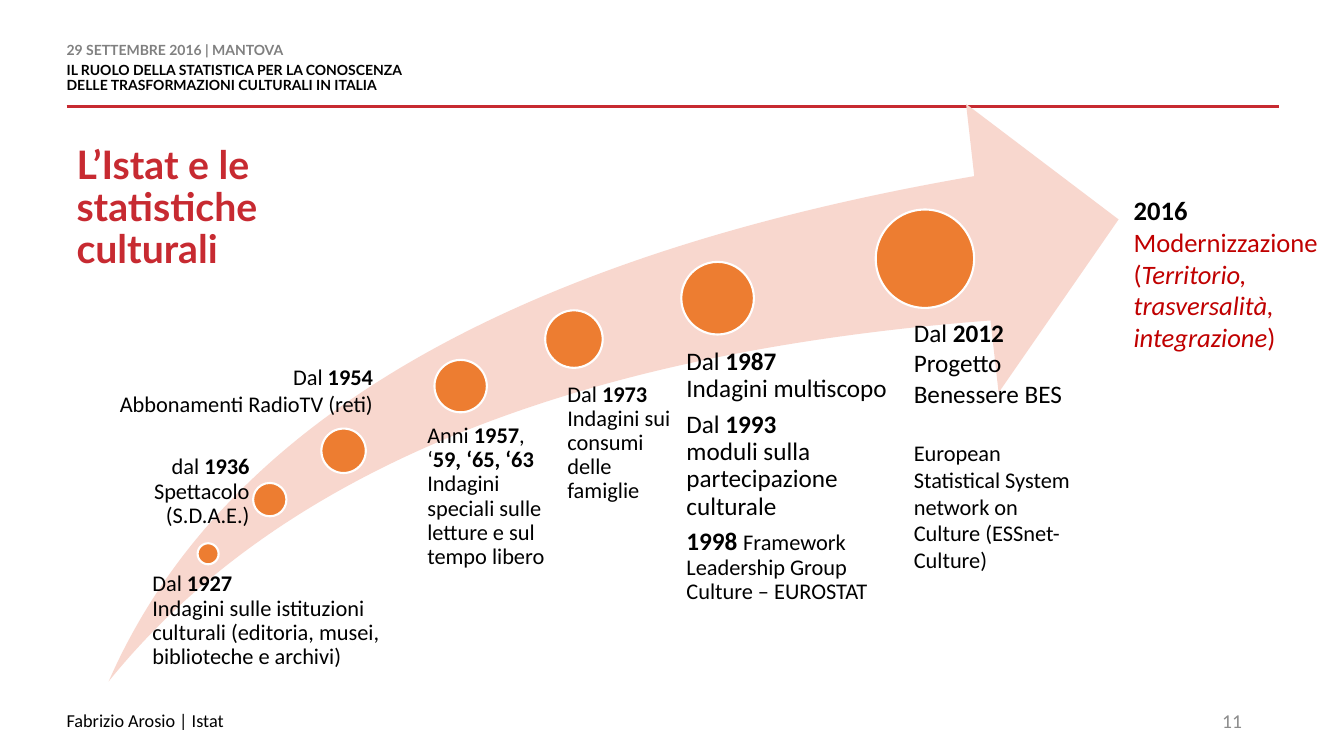
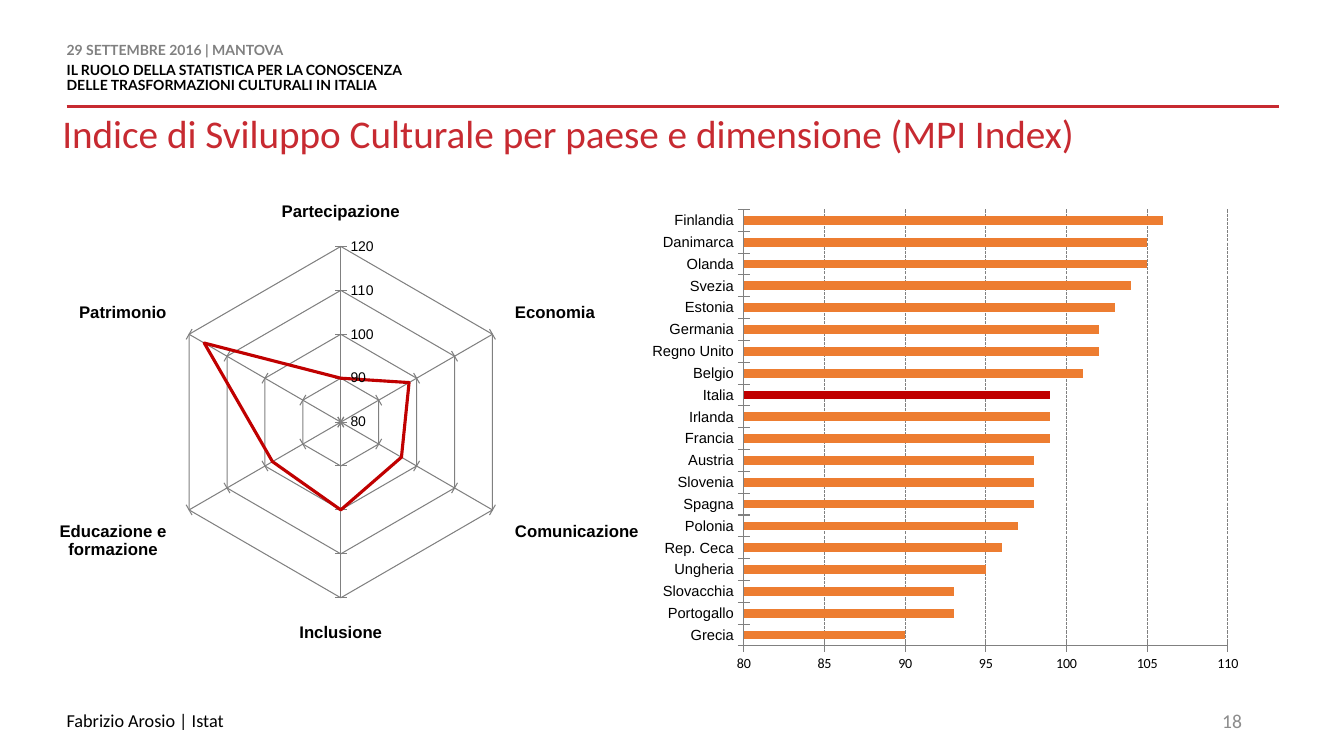
from dataclasses import dataclass

from lxml import etree
from pptx import Presentation
from pptx.chart.data import CategoryChartData
from pptx.dml.color import RGBColor
from pptx.enum.chart import XL_CHART_TYPE, XL_TICK_MARK
from pptx.enum.dml import MSO_LINE
from pptx.enum.shapes import MSO_CONNECTOR, MSO_SHAPE
from pptx.enum.text import MSO_ANCHOR, PP_ALIGN
from pptx.oxml.ns import qn
from pptx.util import Cm, Pt

BAR, RADAR = XL_CHART_TYPE.BAR_CLUSTERED, XL_CHART_TYPE.RADAR
CROSS = XL_TICK_MARK.CROSS
DASH = MSO_LINE.SQUARE_DOT
STRAIGHT = MSO_CONNECTOR.STRAIGHT
SWOOSH, OVAL = MSO_SHAPE.SWOOSH_ARROW, MSO_SHAPE.OVAL
TOP, MIDDLE = MSO_ANCHOR.TOP, MSO_ANCHOR.MIDDLE
LEFT, RIGHT = PP_ALIGN.LEFT, PP_ALIGN.RIGHT


@dataclass(frozen=True)
class Theme:
    red: str = "C72A31"
    deep: str = "C00000"
    orange: str = "ED7D31"
    blush: str = "F8D7CE"
    black: str = "000000"
    white: str = "FFFFFF"
    gray: str = "808080"
    pale: str = "8C8C8C"
    body: str = "Calibri"
    head: str = "Lato"
    plain: str = "Arial"
    title: float = 28
    lead: float = 19
    large: float = 18
    text: float = 16
    page: float = 14
    foot: float = 13
    label: float = 12
    item: float = 10.5
    small: float = 10


T = Theme()
NONE = (0, 0, 0, 0)
INSET = (0.25, 0.13, 0.25, 0.13)


def rgb(code):
    return RGBColor.from_string(code)


def bold(text, **look):
    return text, {"bold": True, **look}


def style(font, size=None, name=None, color=None, bold=None, italic=None):
    if size:
        font.size = Pt(size)
    if name:
        font.name = name
    if color:
        font.color.rgb = rgb(color)
    if bold is not None:
        font.bold = bold
    if italic is not None:
        font.italic = italic


class Deck:
    def __init__(self):
        self.prs = Presentation()
        self.prs.slide_width, self.prs.slide_height = Cm(33.87), Cm(19.05)
        self.slide = None

    def page(self, number):
        """Start a slide with its header, rule and footer."""
        self.slide = self.prs.slides.add_slide(self.prs.slide_layouts[6])
        self.rule(1.68, 32.23, 2.69)
        head = self.text(
            (1.68, 1.09, 17.65, 1.68),
            [["29 SETTEMBRE 2016 | MANTOVA"],
             ["IL RUOLO DELLA STATISTICA PER LA CONOSCENZA"],
             ["DELLE TRASFORMAZIONI CULTURALI IN ITALIA"]],
            T.small, name=T.head, weight=True, inset=NONE, pitch=Pt(11))
        date = head.paragraphs[0]
        date.space_after = Pt(3)
        style(date.font, color=T.gray)
        self.text((1.68, 17.65, 25.35, 1.02), [["Fabrizio Arosio | Istat"]],
                  T.foot, inset=NONE, anchor=MIDDLE)
        self.text((23.93, 17.65, 7.62, 1.02), [[str(number)]],
                  T.page, color=T.pale, align=RIGHT, anchor=MIDDLE)

    def rule(self, start, end, y):
        line = self.slide.shapes.add_connector(
            STRAIGHT, Cm(start), Cm(y), Cm(end), Cm(y))
        line.line.color.rgb = rgb(T.red)
        line.line.width = Pt(2)
        etree.SubElement(line.element.spPr, qn("a:effectLst"))

    def title(self, box, text, **look):
        self.text(box, [[text]], T.title, color=T.red, inset=NONE,
                  pitch=0.9, **look)

    def text(self, box, paras, size=T.text, name=T.body, color=T.black,
             weight=None, align=LEFT, anchor=TOP, inset=INSET, pitch=None,
             gap=0):
        """Each paragraph is a list of strings or (string, look) pairs."""
        frame = self.slide.shapes.add_textbox(*map(Cm, box)).text_frame
        frame.word_wrap = True
        frame.vertical_anchor = anchor
        (frame.margin_left, frame.margin_top,
         frame.margin_right, frame.margin_bottom) = map(Cm, inset)
        for i, parts in enumerate(paras):
            para = frame.add_paragraph() if i else frame.paragraphs[0]
            para.alignment = align
            if pitch:
                para.line_spacing = pitch
            if i and gap:
                para.space_before = Pt(gap)
            style(para.font, size, name, color, weight)
            for part in parts:
                words, look = (part, {}) if isinstance(part, str) else part
                for j, row in enumerate(words.split("\n")):
                    if j:
                        para.add_line_break()
                    if row:
                        run = para.add_run()
                        run.text = row
                        style(run.font, **look)
        return frame

    def shape(self, kind, box, fill, edge=None):
        shape = self.slide.shapes.add_shape(kind, *map(Cm, box))
        shape.shadow.inherit = False
        shape.fill.solid()
        shape.fill.fore_color.rgb = rgb(fill)
        if edge:
            shape.line.color.rgb = rgb(edge)
            shape.line.width = Pt(1.5)
        else:
            shape.line.fill.background()
        return shape

    def chart(self, kind, box, data, plot, scale):
        """Add a one-series chart; plot is the inner area in fractions."""
        source = CategoryChartData(number_format="0")
        source.categories = [name for name, _ in data]
        source.add_series("MPI", [value for _, value in data])
        chart = self.slide.shapes.add_chart(
            kind, *map(Cm, box), source).chart
        chart.has_legend = chart.has_title = False
        style(chart.font, T.small, T.body, T.black)
        chart.plots[0].vary_by_categories = False
        # Axes
        values = chart.value_axis
        (values.minimum_scale, values.maximum_scale,
         values.major_unit) = scale
        values.has_major_gridlines = True
        for axis in (chart.category_axis, values):
            axis.major_tick_mark = CROSS
            axis.format.line.color.rgb = rgb(T.gray)
            axis.format.line.width = Pt(0.75)
        grid = values.major_gridlines.format.line
        grid.color.rgb = rgb(T.gray)
        grid.width = Pt(0.75)
        # Plot area
        area = chart.element.xpath(".//c:plotArea")[0]
        for old in area.findall(qn("c:layout")):
            area.remove(old)
        layout = etree.Element(qn("c:layout"))
        manual = etree.SubElement(layout, qn("c:manualLayout"))
        marks = [("layoutTarget", "inner"), ("xMode", "edge"),
                 ("yMode", "edge"), *zip("xywh", plot)]
        for tag, value in marks:
            etree.SubElement(manual, qn(f"c:{tag}")).set("val", str(value))
        area.insert(0, layout)
        return chart


# Timeline: left, top, diameter of each dot
DOTS = [(4.98, 13.69, 0.53), (6.38, 12.17, 0.84), (8.1, 10.8, 1.12),
        (10.95, 9.07, 1.32), (13.74, 7.82, 1.45), (17.17, 6.6, 1.83),
        (22.07, 5.28, 2.48)]

# Timeline: box, left inset, alignment, type size, paragraphs
NOTES = [
    ((3.56, 14.43, 7.39, 2.26), 0.28, LEFT, T.text,
     [["Dal ", bold("1927"), "\nIndagini sulle istituzioni culturali "
       "(editoria, musei, biblioteche e archivi)"]]),
    ((1.24, 11.48, 5.05, 1.91), 0.43, RIGHT, T.text,
     [["dal ", bold("1936"), "\nSpettacolo (S.D.A.E.)"]]),
    ((10.19, 10.69, 3.66, 4.37), 0.58, LEFT, T.text,
     [["Anni ", bold("1957"), ", ‘", bold("59, ‘65, ‘63"),
       " Indagini speciali sulle letture e sul tempo libero"]]),
    ((13.54, 9.65, 3.53, 5.31), 0.76, LEFT, T.text,
     [["Dal ", bold("1973"), " Indagini sui consumi delle famiglie"]]),
    ((16.33, 8.79, 6.53, 5.44), 0.97, LEFT, T.large,
     [["Dal ", bold("1987"), "\nIndagini multiscopo"],
      ["Dal ", bold("1993"), "\nmoduli sulla partecipazione culturale"],
      [bold("1998 "), ("Framework\nLeadership Group Culture – EUROSTAT",
                       {"size": T.text})]]),
]

# Chart values
NATIONS = [
    ("Grecia", 90), ("Portogallo", 93), ("Slovacchia", 93), ("Ungheria", 95),
    ("Rep. Ceca", 96), ("Polonia", 97), ("Spagna", 98), ("Slovenia", 98),
    ("Austria", 98), ("Francia", 99), ("Irlanda", 99), ("Italia", 99),
    ("Belgio", 101), ("Regno Unito", 102), ("Germania", 102),
    ("Estonia", 103), ("Svezia", 104), ("Olanda", 105), ("Danimarca", 105),
    ("Finlandia", 106)]
THEMES = [
    ("Partecipazione", 90), ("Economia", 98), ("Comunicazione", 96),
    ("Inclusione", 100), ("Educazione e\nformazione", 98),
    ("Patrimonio", 116)]


def history(deck):
    deck.page(11)
    deck.title((1.93, 3.66, 7.72, 5.11), "L’Istat e le statistiche culturali",
               name=T.head, weight=True)
    # Arrow and dots
    arrow = deck.shape(SWOOSH, (2.74, 2.62, 25.45, 14.55), T.blush)
    arrow.adjustments[0] = arrow.adjustments[1] = 0.25
    for left, top, size in DOTS:
        deck.shape(OVAL, (left, top, size, size), T.orange, T.white)
    # Notes
    for box, indent, align, size, paras in NOTES:
        deck.text(box, paras, size, align=align, inset=(indent, 0, 0, 0),
                  pitch=0.9, gap=6)
    deck.text((1.93, 9.02, 7.72, 1.63),
              [["Dal ", bold("1954"), "\nAbbonamenti RadioTV (reti)"]],
              align=RIGHT)
    deck.text((22.78, 7.87, 4.47, 7.52),
              [["Dal ", bold("2012"), "\nProgetto Benessere BES"],
               [("European Statistical System network on Culture "
                 "(ESSnet-Culture)", {"size": T.text})]], T.large, gap=22)
    deck.text((28.32, 4.75, 5.46, 4.32),
              [[bold("2016 ", color=T.black), "Modernizzazione (",
                ("Territorio, trasversalità, integrazione",
                 {"italic": True}), ")"]], T.lead, color=T.deep)


def index(deck):
    deck.page(18)
    deck.title((1.57, 2.9, 30.56, 2.18),
               "Indice di Sviluppo Culturale per paese e dimensione (MPI Index)")
    # Countries
    bars = deck.chart(BAR, (15.19, 5.03, 16.94, 12.5), NATIONS,
                      (0.21, 0.02, 0.72, 0.88), (80, 110, 5))
    style(bars.category_axis.tick_labels.font, T.item, T.plain, T.black)
    bars.value_axis.major_gridlines.format.line.dash_style = DASH
    bars.plots[0].gap_width = 150
    series = bars.plots[0].series[0]
    italy = [name for name, _ in NATIONS].index("Italia")
    for part, color in ((series, T.orange), (series.points[italy], T.deep)):
        part.format.fill.solid()
        part.format.fill.fore_color.rgb = rgb(color)
    # Dimensions
    web = deck.chart(RADAR, (0, 5.03, 16.1, 11.33), THEMES,
                     (0.26, 0.06, 0.55, 0.87), (80, 120, 10))
    style(web.category_axis.tick_labels.font, T.label, T.plain, T.black, True)
    style(web.value_axis.tick_labels.font, T.small, T.plain, T.black)
    line = web.plots[0].series[0].format.line
    line.color.rgb = rgb(T.deep)
    line.width = Pt(2.25)


def main():
    deck = Deck()
    history(deck)
    index(deck)
    deck.prs.save("out.pptx")


if __name__ == "__main__":
    main()
